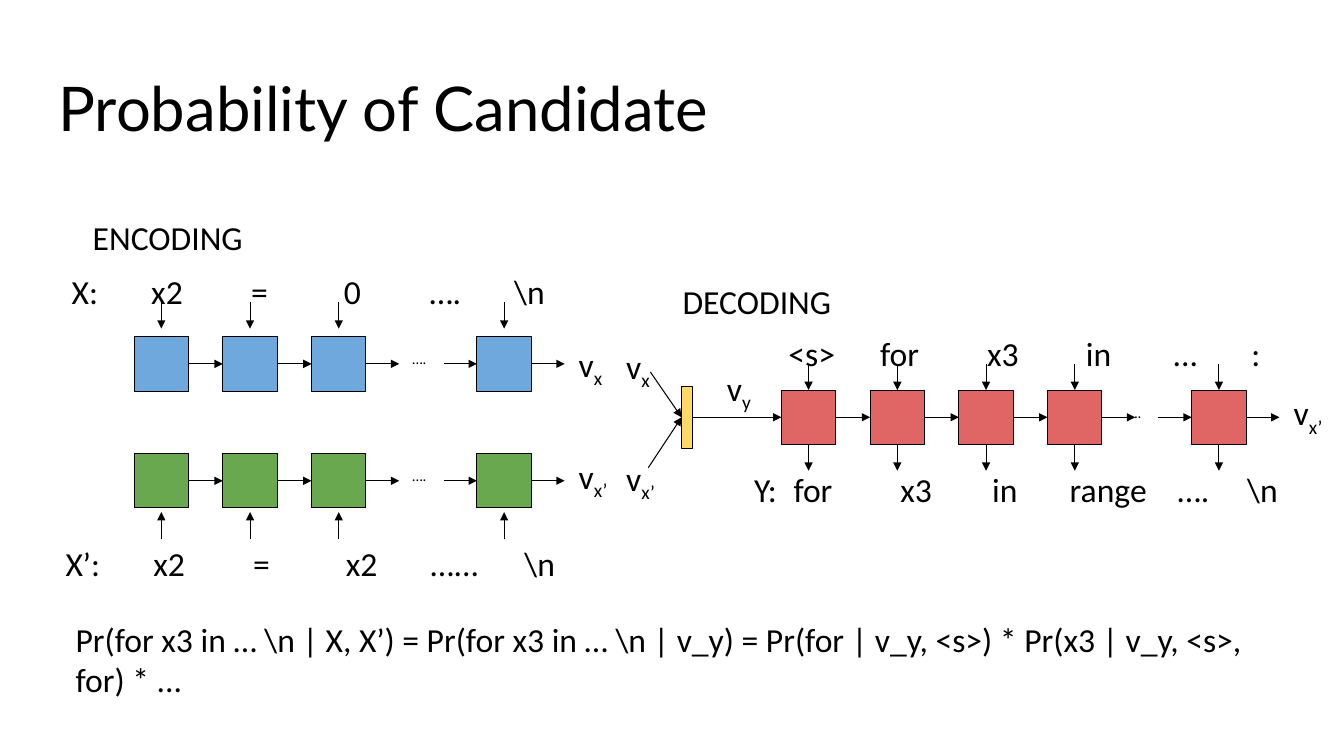
from itertools import pairwise

from lxml.etree import SubElement
from pptx import Presentation
from pptx.dml.color import RGBColor
from pptx.enum.shapes import MSO_CONNECTOR, MSO_SHAPE
from pptx.enum.text import MSO_ANCHOR, MSO_AUTO_SIZE, PP_ALIGN
from pptx.oxml.ns import qn
from pptx.util import Emu, Pt

PX = 9144
CELL = 54
REACH = 33
INSET = 13
TOP, LEFT, BOTTOM, RIGHT = range(4)
COLOURS = {
    "ink": "000000",
    "blue": "6FA8DC",
    "green": "6AA84F",
    "red": "E06666",
    "yellow": "FFD966",
}


def px(length):
    return Emu(length * PX)


def colour_of(name):
    return RGBColor.from_string(COLOURS[name])


def write_text(box, text, size=24, font="Calibri", subscript="", stops=(), spacing=None):
    frame = box.text_frame
    frame.word_wrap = True
    frame.auto_size = MSO_AUTO_SIZE.NONE
    frame.vertical_anchor = MSO_ANCHOR.TOP
    frame.margin_left = frame.margin_right = px(INSET)
    frame.margin_top = frame.margin_bottom = px(INSET)
    para = frame.paragraphs[0]
    para.alignment = PP_ALIGN.LEFT
    if spacing:
        para.line_spacing = spacing
    if stops:
        tabs = SubElement(para._p.get_or_add_pPr(), qn("a:tabLst"))
        for stop in stops:
            SubElement(tabs, qn("a:tab"), pos=str(px(stop)), algn="l")
    for content, baseline in ((text, None), (subscript, "-25000")):
        if not content:
            continue
        span = para.add_run()
        span.text = content
        span.font.size = Pt(size)
        span.font.name = font
        span.font.color.rgb = colour_of("ink")
        if baseline:
            span._r.get_or_add_rPr().set("baseline", baseline)


def add_label(page, left, top, width, height, text, **style):
    box = page.shapes.add_textbox(px(left), px(top), px(width), px(height))
    write_text(box, text, **style)


def add_vector(page, left, top, subscript):
    add_label(page, left, top, 69, 20, "v", subscript=subscript)


def add_tokens(page, left, top, width, tokens, stops):
    add_label(page, left, top, width, 35, "\t".join(tokens), stops=stops)


def add_block(page, left, top, width, height, colour):
    block = page.shapes.add_shape(
        MSO_SHAPE.RECTANGLE, px(left), px(top), px(width), px(height))
    block.shadow.inherit = False
    block.fill.solid()
    block.fill.fore_color.rgb = colour_of(colour)
    block.line.color.rgb = colour_of("ink")
    block.line.width = Pt(0.75)
    return block


def add_arrow(page, start, end, source=None, target=None):
    arrow = page.shapes.add_connector(
        MSO_CONNECTOR.STRAIGHT, *(px(length) for length in (*start, *end)))
    if source:
        arrow.begin_connect(*source)
    if target:
        arrow.end_connect(*target)
    arrow.line.color.rgb = colour_of("ink")
    arrow.line.width = Pt(0.75)
    SubElement(arrow.line._get_or_add_ln(), qn("a:tailEnd"), type="triangle")
    SubElement(arrow._element.spPr, qn("a:effectLst"))


def add_chain(page, left, top, offsets, colour, dots_left):
    cells = [add_block(page, left + offset, top, CELL, CELL, colour) for offset in offsets]
    middle = top + CELL // 2
    *leading, last = cells
    for source, target in pairwise(leading):
        add_arrow(page, (0, 0), (0, 0), (source, RIGHT), (target, LEFT))
    for offset, cell in zip(offsets[-2:], cells[-2:]):
        right = left + offset + CELL
        add_arrow(page, (right, middle), (right + REACH, middle), source=(cell, RIGHT))
    last_left = left + offsets[-1]
    add_arrow(page, (last_left - REACH, middle), (last_left, middle), target=(last, LEFT))
    add_label(page, left + dots_left, top, 49, 27, "….", size=10.7)
    return cells


def add_encoder(page, left, top, colour, feed_start, feed_end, output_rise, subscript):
    offsets = (0, 88, 176, 340)
    add_chain(page, left, top, offsets, colour, dots_left=263)
    for offset in offsets:
        centre = left + offset + CELL // 2
        add_arrow(page, (centre, top + feed_start), (centre, top + feed_end))
    add_vector(page, left + 428, top - output_rise, subscript)


def add_encoding(page, left, top):
    add_label(page, left + 27, top, 457, 54, "ENCODING")
    add_tokens(page, left + 6, top + 54, 552,
               ("X:", "x2", "=", "0", "….", "\\n"), (79, 178, 270, 355, 439))
    add_encoder(page, left + 81, top + 132, "blue", -34, -8, 3, "x")
    add_encoder(page, left + 81, top + 248, "green", CELL + 31, CELL + 4, 8, "x’")
    add_tokens(page, left, top + 324, 558,
               ("X’:", "x2", "=", "x2", "…...", "\\n"), (87, 186, 278, 362, 455))


def add_merge(page, left, top, first_cell):
    bar = add_block(page, left + 68, top + 50, 11, 62, "yellow")
    add_vector(page, left, top, "x")
    add_vector(page, left, top + 111, "x’")
    for start in ((left + 37, top + 36), (left + 35, top + 131)):
        add_arrow(page, start, (left + 68, top + 81), target=(bar, LEFT))
    add_arrow(page, (0, 0), (0, 0), (bar, RIGHT), (first_cell, LEFT))
    add_vector(page, left + 100, top + 22, "y")


def add_decoding(page, left, top):
    add_label(page, left, top, 457, 54, "DECODING")
    add_tokens(page, left + 105, top + 51, 558,
               ("<s>", "for", "x3", "in", "...", ":"), (91, 197, 295, 381, 459))
    chain_left, chain_top = left + 111, top + 121
    offsets = (0, 88, 176, 264, 407)
    cells = add_chain(page, chain_left, chain_top, offsets, "red", dots_left=330)
    for offset, cell in zip(offsets, cells):
        centre = chain_left + offset + CELL // 2
        bottom = chain_top + CELL
        add_arrow(page, (centre, chain_top - 26), (centre, chain_top), target=(cell, TOP))
        add_arrow(page, (centre, bottom), (centre, bottom + 26), source=(cell, BOTTOM))
    add_vector(page, left + 606, top + 113, "x’")
    add_tokens(page, left + 71, top + 186, 558,
               ("Y:", "for", "x3", "in", "range", "….", "\\n"),
               (39, 145, 236, 313, 420, 489))
    return cells[0]


def add_title(page, left, top, width, height):
    title = page.shapes.title
    title.left, title.top = px(left), px(top)
    title.width, title.height = px(width), px(height)
    write_text(title, "Probability of Candidate", size=44, font="Lato", spacing=0.9)


def main():
    deck = Presentation()
    deck.slide_width, deck.slide_height = px(1333), px(750)
    page = deck.slides.add_slide(deck.slide_layouts[5])
    add_title(page, 45, 65, 1242, 84)
    add_encoding(page, 52, 202)
    first_cell = add_decoding(page, 664, 266)
    add_merge(page, 608, 333, first_cell)
    add_label(page, 62, 601, 1208, 90,
              "Pr(for x3 in … \\n | X, X’) = Pr(for x3 in … \\n | v_y) = "
              "Pr(for | v_y, <s>) * Pr(x3 | v_y, <s>, for) * ...")
    deck.save("out.pptx")


if __name__ == "__main__":
    main()
